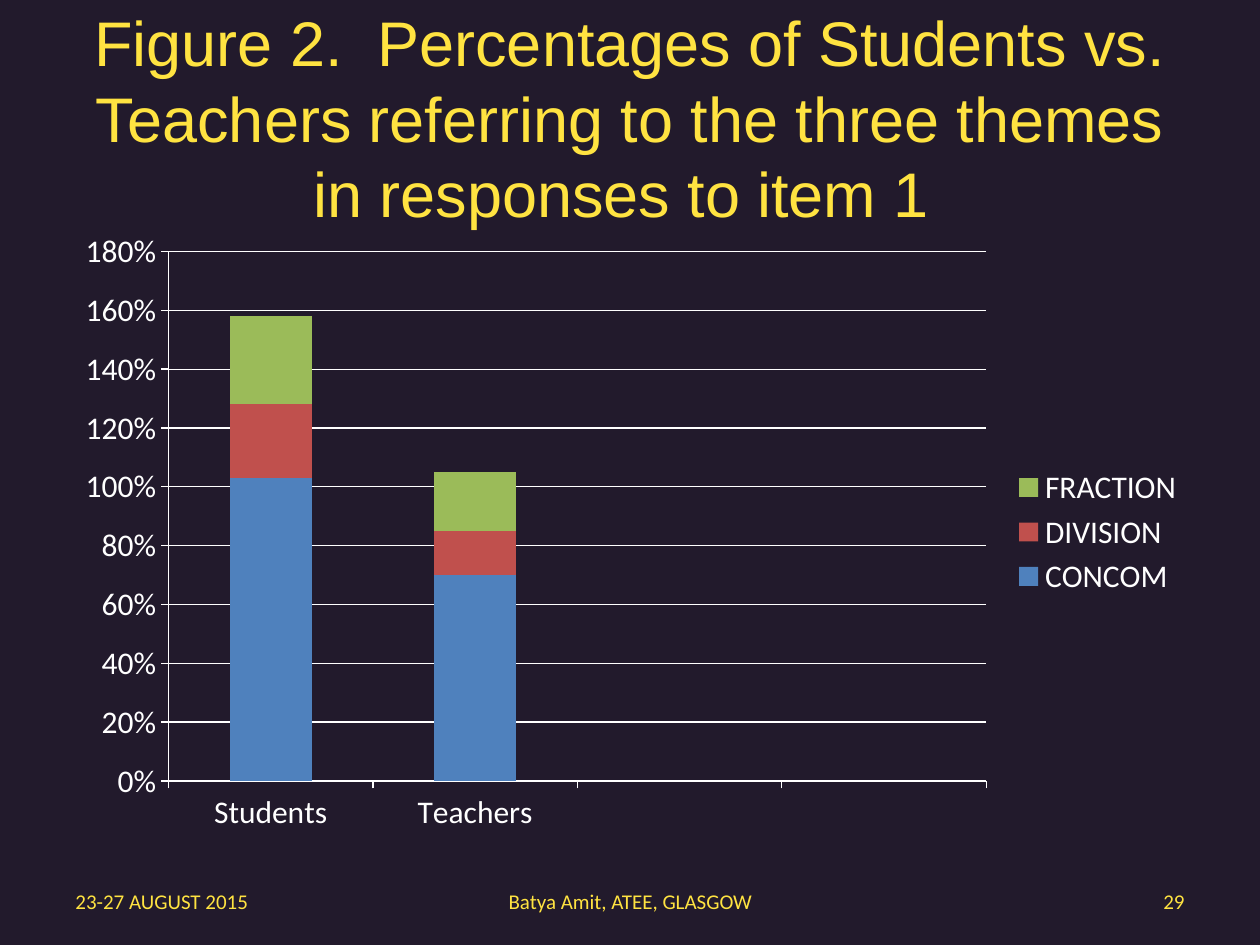
from pptx import Presentation
from pptx.chart.data import CategoryChartData
from pptx.dml.color import RGBColor
from pptx.enum.chart import XL_CHART_TYPE, XL_LEGEND_POSITION, XL_TICK_MARK
from pptx.enum.text import MSO_ANCHOR, PP_ALIGN
from pptx.util import Emu, Pt

COLORS = {
    "back": "221A2C",
    "gold": "FFE341",
    "white": "FFFFFF",
    "CONCOM": "4F81BD",
    "DIVISION": "C0504D",
    "FRACTION": "9BBB59",
}
SHARES = {
    "CONCOM": (1.03, 0.7, None, None),
    "DIVISION": (0.25, 0.15, None, None),
    "FRACTION": (0.3, 0.2, None, None),
}
GROUPS = ("Students", "Teachers", "", "")
TITLE = ("Figure 2.  Percentages of Students vs. Teachers referring "
         "to the three themes in responses to item 1 ")
SCALE = 914400 / 126  # EMU per px


def px(n):
    return Emu(round(n * SCALE))


def color(name):
    return RGBColor.from_string(COLORS[name])


def add_text(slide, box, text, size, face, align):
    frame = slide.shapes.add_textbox(*map(px, box)).text_frame
    frame.word_wrap = True
    frame.vertical_anchor = MSO_ANCHOR.MIDDLE
    frame.text = text
    para = frame.paragraphs[0]
    para.alignment = align
    font = para.runs[0].font
    font.size, font.name = Pt(size), face
    font.color.rgb = color("gold")


def set_line(line):
    line.color.rgb = color("white")
    line.width = Pt(0.75)


def add_bars(slide, box):
    data = CategoryChartData(number_format="0%")
    data.categories = GROUPS
    for name, vals in SHARES.items():
        data.add_series(name, vals)
    chart = slide.shapes.add_chart(
        XL_CHART_TYPE.COLUMN_STACKED, *map(px, box), data).chart
    chart.has_title = False
    chart.font.size, chart.font.name = Pt(18), "Calibri"
    chart.font.color.rgb = color("white")

    # Stacked columns
    plot = chart.plots[0]
    plot.gap_width, plot.overlap = 150, 100
    plot.vary_by_categories = False
    for series in plot.series:
        series.format.fill.solid()
        series.format.fill.fore_color.rgb = color(series.name)

    # Axes and grid
    for axis in (chart.category_axis, chart.value_axis):
        axis.major_tick_mark = XL_TICK_MARK.OUTSIDE
        axis.minor_tick_mark = XL_TICK_MARK.NONE
        set_line(axis.format.line)
    scale = chart.value_axis
    scale.minimum_scale, scale.maximum_scale, scale.major_unit = 0, 1.8, 0.2
    scale.tick_labels.number_format = "0%"
    scale.tick_labels.number_format_is_linked = False
    scale.has_major_gridlines = True
    set_line(scale.major_gridlines.format.line)

    # Legend
    chart.has_legend = True
    chart.legend.position = XL_LEGEND_POSITION.RIGHT
    chart.legend.include_in_layout = False


def main():
    deck = Presentation()
    deck.slide_width, deck.slide_height = px(1260), px(945)
    slide = deck.slides.add_slide(deck.slide_layouts[6])
    slide.background.fill.solid()
    slide.background.fill.fore_color.rgb = color("back")

    # Title and chart
    add_text(slide, (63, 38, 1134, 158), TITLE, 36, "Arial", PP_ALIGN.CENTER)
    add_bars(slide, (63, 220, 1134, 624))

    # Footer
    for left, width, text, align in (
        (63, 294, "23-27 AUGUST 2015", PP_ALIGN.LEFT),
        (431, 399, "Batya Amit, ATEE, GLASGOW", PP_ALIGN.CENTER),
        (903, 294, "29", PP_ALIGN.RIGHT),
    ):
        add_text(slide, (left, 876, width, 50), text, 12, "Calibri", align)

    deck.save("out.pptx")


if __name__ == "__main__":
    main()
